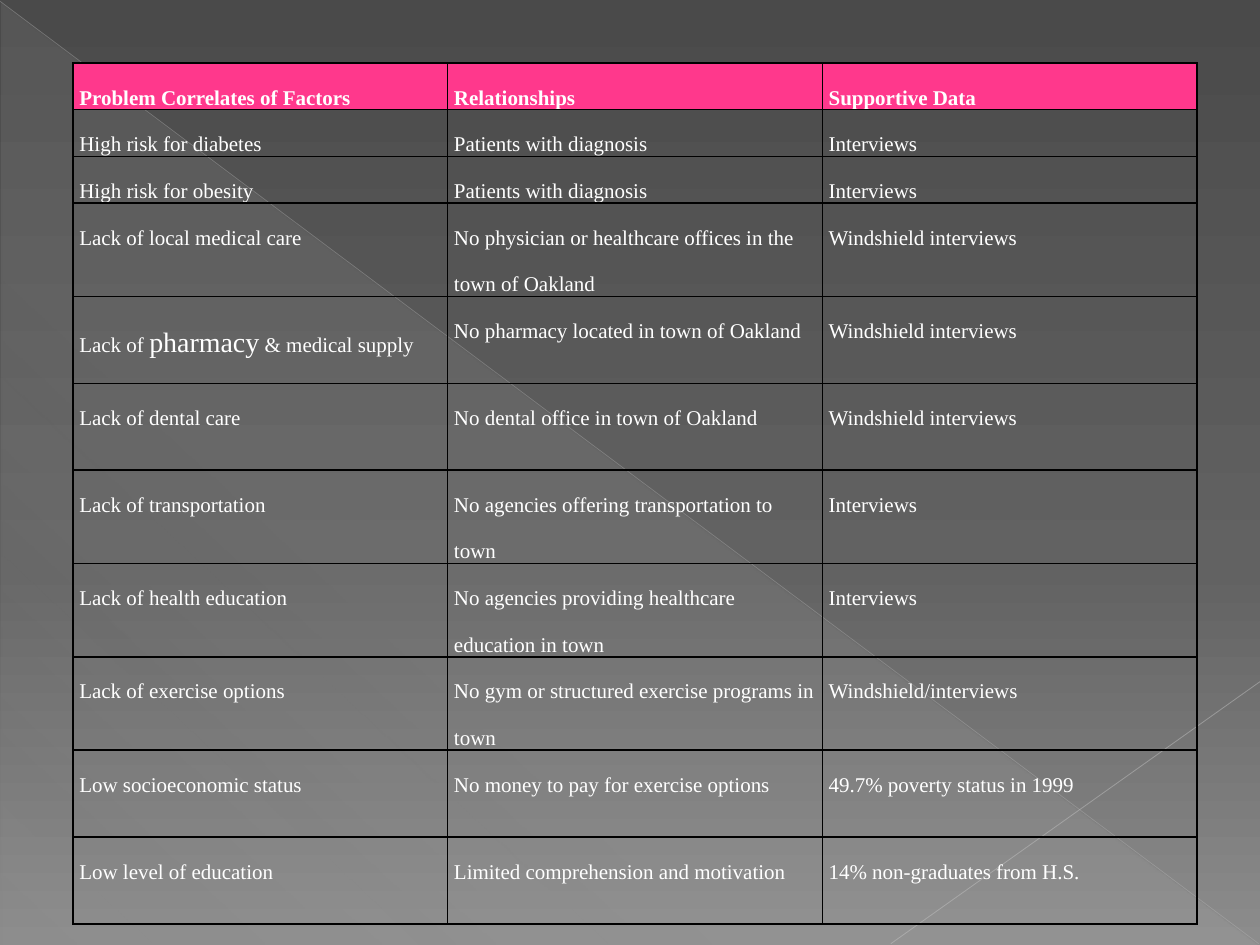
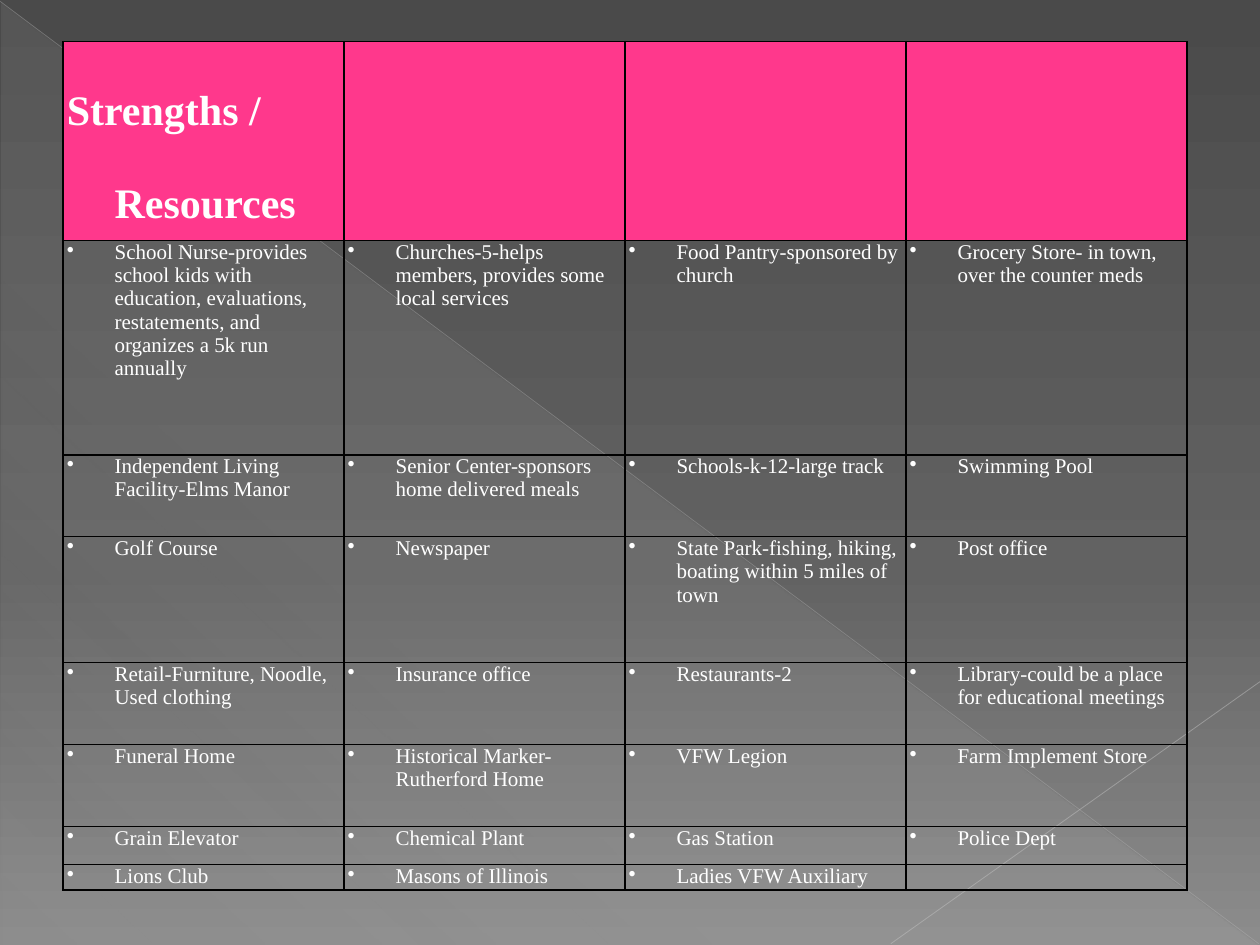
from lxml.etree import SubElement
from pptx import Presentation
from pptx.dml.color import RGBColor
from pptx.enum.shapes import MSO_CONNECTOR, MSO_SHAPE
from pptx.oxml.ns import qn
from pptx.util import Inches, Pt

DARK_GREY = RGBColor(0x4A, 0x4A, 0x4A)
MID_GREY = RGBColor(0x62, 0x62, 0x62)
LIGHT_GREY = RGBColor(0x8C, 0x8C, 0x8C)
TRIANGLE_GREY = RGBColor(0xD2, 0xD2, 0xD2)
LONG_LINE_GREY = RGBColor(0xBF, 0xBF, 0xBF)
SHORT_LINE_GREY = RGBColor(0xC6, 0xC6, 0xC6)
PINK = RGBColor(0xFF, 0x38, 0x8C)
WHITE = RGBColor(0xFF, 0xFF, 0xFF)
BLACK = RGBColor(0, 0, 0)

FONT = "Times New Roman"
BODY_SIZE = 12
EMPHASIS_SIZE = 16
HANGING_INDENT = Inches(0.38)
EMPHASIS_MARK = "*"

FACTORS = [
    ("Problem Correlates of Factors", "Relationships", "Supportive Data"),
    ("High risk for diabetes", "Patients with diagnosis", "Interviews"),
    ("High risk for obesity", "Patients with diagnosis", "Interviews"),
    ("Lack of local medical care",
     "No physician or healthcare offices in the town of Oakland", "Windshield interviews"),
    ("Lack of *pharmacy* & medical supply",
     "No pharmacy located in town of Oakland", "Windshield interviews"),
    ("Lack of dental care", "No dental office in town of Oakland", "Windshield interviews"),
    ("Lack of transportation", "No agencies offering transportation to town", "Interviews"),
    ("Lack of health education",
     "No agencies providing healthcare education in town", "Interviews"),
    ("Lack of exercise options",
     "No gym or structured exercise programs in town", "Windshield/interviews"),
    ("Low socioeconomic status",
     "No money to pay for exercise options", "49.7% poverty status in 1999"),
    ("Low level of education",
     "Limited comprehension and motivation", "14% non-graduates from H.S."),
]
FACTOR_ROW_HEIGHTS = [0.35] * 3 + [0.69] * 8

RESOURCES = [
    ("Strengths / Resources", "", "", ""),
    ("School Nurse-provides school kids with education, evaluations, restatements, "
     "and organizes a 5k run annually",
     "Churches-5-helps members, provides some local services",
     "Food Pantry-sponsored by church",
     "Grocery Store- in town, over the counter meds"),
    ("Independent Living Facility-Elms Manor",
     "Senior Center-sponsors home delivered meals",
     "Schools-k-12-large track", "Swimming Pool"),
    ("Golf Course", "Newspaper",
     "State Park-fishing, hiking, boating within 5 miles of town", "Post office"),
    ("Retail-Furniture, Noodle, Used clothing", "Insurance office", "Restaurants-2",
     "Library-could be a place for educational meetings"),
    ("Funeral Home", "Historical Marker-Rutherford Home", "VFW Legion",
     "Farm Implement Store"),
    ("Grain Elevator", "Chemical Plant", "Gas Station", "Police Dept"),
    ("Lions Club", "Masons of Illinois", "Ladies VFW Auxiliary", ""),
]
RESOURCE_ROW_HEIGHTS = [1.58, 1.7, 0.65, 1, 0.65, 0.65, 0.3, 0.05]


def set_gradient(fill, properties, stops, angle):
    """Fill with (position, colour, opacity) stops, all in percent."""
    fill.gradient()
    gradient = properties.find(qn("a:gradFill"))
    for child in list(gradient):
        gradient.remove(child)
    stop_list = SubElement(gradient, qn("a:gsLst"))
    for position, color, opacity in stops:
        stop = SubElement(stop_list, qn("a:gs"), pos=str(position * 1000))
        color_element = SubElement(stop, qn("a:srgbClr"), val=str(color))
        SubElement(color_element, qn("a:alpha"), val=str(opacity * 1000))
    SubElement(gradient, qn("a:lin"), ang=str(angle * 60000), scaled="0")


def add_faint_line(shapes, start, end, color, width, opacity):
    points = [Inches(value) for value in (*start, *end)]
    line = shapes.add_connector(MSO_CONNECTOR.STRAIGHT, *points)
    line.line.color.rgb = color
    line.line.width = Pt(width)
    properties = line._element.spPr
    color_element = next(properties.iter(qn("a:srgbClr")))
    SubElement(color_element, qn("a:alpha"), val=str(opacity * 1000))
    SubElement(properties, qn("a:effectLst"))
    return line


def build_backdrop(presentation, layout, slide):
    """Draw the shared backdrop on the slide, then move it to the layout."""
    for placeholder in list(layout.placeholders):
        layout.shapes.element.remove(placeholder.element)
    background = presentation.slide_master.background
    background.fill.solid()
    properties = next(presentation.slide_master.element.iter(qn("p:bgPr")))
    set_gradient(background.fill, properties,
                 [(0, DARK_GREY, 100), (60, MID_GREY, 100), (100, LIGHT_GREY, 100)], 90)

    triangle = slide.shapes.add_shape(
        MSO_SHAPE.RIGHT_TRIANGLE, Inches(0.01), Inches(0.02), Inches(9.98), Inches(7.48))
    triangle.shadow.inherit = False
    triangle.line.fill.background()
    set_gradient(triangle.fill, triangle._element.spPr,
                 [(0, TRIANGLE_GREY, 10), (70, TRIANGLE_GREY, 8), (100, TRIANGLE_GREY, 1)], 133)
    long_line = add_faint_line(
        slide.shapes, (0, 0.01), (9.99, 7.49), LONG_LINE_GREY, 0.39, 35)
    short_line = add_faint_line(
        slide.shapes, (10, 5.41), (7.07, 7.49), SHORT_LINE_GREY, 0.47, 45)
    for shape in (triangle, long_line, short_line):
        layout.shapes.element.append(shape.element)


def add_borders(cell):
    properties = cell._tc.get_or_add_tcPr()
    for side in ("lnL", "lnR", "lnT", "lnB"):
        border = SubElement(properties, qn(f"a:{side}"), w=str(Pt(1)))
        solid = SubElement(border, qn("a:solidFill"))
        SubElement(solid, qn("a:srgbClr"), val=str(BLACK))


def write_runs(paragraph, text, size, bold):
    """Add the text, with any part between marks in the larger size."""
    for index, part in enumerate(text.split(EMPHASIS_MARK)):
        run = paragraph.add_run()
        run.text = part
        run.font.name = FONT
        run.font.size = Pt(EMPHASIS_SIZE if index % 2 else size)
        run.font.bold = bold
        run.font.color.rgb = WHITE


def hang_paragraph(paragraph, bulleted):
    paragraph.space_after = Pt(10)
    properties = paragraph._p.get_or_add_pPr()
    properties.set("marL", str(HANGING_INDENT))
    properties.set("indent", str(-HANGING_INDENT))
    if bulleted:
        SubElement(properties, qn("a:buChar"), char="•")


def add_grid(slide, box, rows, row_heights, side_margin, header_size, hanging):
    """Add a bordered table with a pink header row."""
    left, top, width = box
    column_count = len(rows[0])
    table = slide.shapes.add_table(
        len(rows), column_count, Inches(left), Inches(top),
        Inches(width), Inches(sum(row_heights))).table
    table.first_row = table.horz_banding = False
    for column in table.columns:
        column.width = Inches(width / column_count)
    for row_index, (texts, height) in enumerate(zip(rows, row_heights)):
        table.rows[row_index].height = Inches(height)
        is_header = row_index == 0
        for column_index, text in enumerate(texts):
            cell = table.cell(row_index, column_index)
            cell.margin_left = cell.margin_right = Inches(side_margin)
            cell.margin_top = cell.margin_bottom = 0
            add_borders(cell)
            if is_header:
                cell.fill.solid()
                cell.fill.fore_color.rgb = PINK
            else:
                cell.fill.background()
            paragraph = cell.text_frame.paragraphs[0]
            if not text:
                SubElement(paragraph._p, qn("a:endParaRPr"), sz=str(BODY_SIZE * 100))
                continue
            if is_header or not hanging:
                paragraph.line_spacing = 2.0
            if hanging:
                hang_paragraph(paragraph, bulleted=not is_header)
            write_runs(paragraph, text, header_size if is_header else BODY_SIZE, is_header)


def main():
    presentation = Presentation()
    presentation.slide_width = Inches(10)
    presentation.slide_height = Inches(7.5)
    layout = presentation.slide_layouts[6]
    factors_slide = presentation.slides.add_slide(layout)
    resources_slide = presentation.slides.add_slide(layout)

    build_backdrop(presentation, layout, factors_slide)
    add_grid(factors_slide, (0.58, 0.5, 8.92), FACTORS, FACTOR_ROW_HEIGHTS,
             side_margin=0.05, header_size=BODY_SIZE, hanging=False)
    add_grid(resources_slide, (0.5, 0.33, 8.92), RESOURCES, RESOURCE_ROW_HEIGHTS,
             side_margin=0.03, header_size=24, hanging=True)
    presentation.save("out.pptx")


if __name__ == "__main__":
    main()
